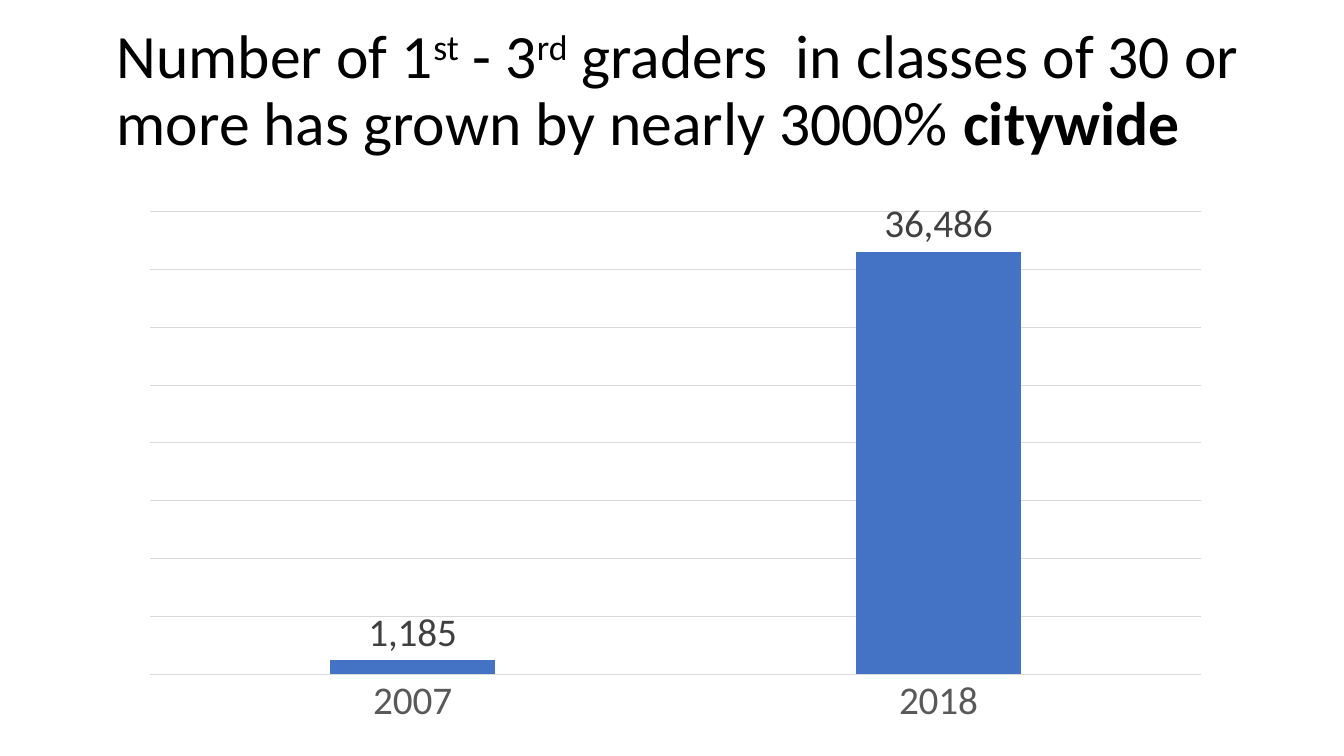
from lxml import etree
from pptx import Presentation
from pptx.chart.data import CategoryChartData
from pptx.dml.color import RGBColor
from pptx.enum.chart import XL_CHART_TYPE, XL_LABEL_POSITION, XL_TICK_MARK
from pptx.enum.text import MSO_ANCHOR
from pptx.oxml.ns import qn
from pptx.util import Inches, Pt

COLUMN = XL_CHART_TYPE.COLUMN_CLUSTERED
OUTSIDE = XL_LABEL_POSITION.OUTSIDE_END
NO_TICK = XL_TICK_MARK.NONE
MIDDLE = MSO_ANCHOR.MIDDLE
FACE = "Calibri"
BLACK, GREY, DARK, PALE, BLUE = "000000", "595959", "404040", "D9D9D9", "4472C4"

# Title runs: text, raised, bold
TITLE = [
    ("Number of 1", False, False),
    ("st", True, False),
    (" - 3", False, False),
    ("rd", True, False),
    (" graders  in classes of 30 or more has grown by nearly 3000% ", False, False),
    ("citywide", False, True),
]
COUNTS = {"2007": 1185, "2018": 36486}


def color(code):
    return RGBColor.from_string(code)


def style(font, size, code):
    font.name = FACE
    font.size = Pt(size)
    font.color.rgb = color(code)


def rule(line):
    line.color.rgb = color(PALE)
    line.width = Pt(0.75)


def add_title(slide, left, top, width, height):
    box = slide.shapes.add_textbox(Inches(left), Inches(top), Inches(width), Inches(height))
    frame = box.text_frame
    frame.word_wrap = True
    frame.vertical_anchor = MIDDLE
    para = frame.paragraphs[0]
    para.line_spacing = 0.9
    for text, raised, bold in TITLE:
        run = para.add_run()
        run.text = text
        style(run.font, 44, BLACK)
        run.font.bold = bold
        if raised:
            run.font._element.set("baseline", "30000")


def set_plot(chart, x, y, w, h):
    """Fix the inner plot area as fractions of the chart."""
    area = chart._chartSpace.chart.plotArea
    for old in area.findall(qn("c:layout")):
        area.remove(old)
    layout = etree.Element(qn("c:layout"))
    manual = etree.SubElement(layout, qn("c:manualLayout"))
    parts = [("layoutTarget", "inner"), ("xMode", "edge"), ("yMode", "edge"),
             ("x", x), ("y", y), ("w", w), ("h", h)]
    for tag, value in parts:
        etree.SubElement(manual, qn("c:" + tag)).set("val", str(value))
    area.insert(0, layout)


def add_columns(slide, left, top, width, height):
    data = CategoryChartData(number_format="#,##0")
    data.categories = list(COUNTS)
    data.add_series("Series 1", list(COUNTS.values()))
    chart = slide.shapes.add_chart(
        COLUMN, Inches(left), Inches(top), Inches(width), Inches(height), data).chart
    chart.has_legend = False
    chart.has_title = False
    style(chart.font, 10, BLACK)
    set_plot(chart, 0.063, 0.081, 0.919, 0.808)

    # Columns and their labels
    plot = chart.plots[0]
    plot.vary_by_categories = False
    plot.gap_width = 219
    plot.overlap = -27
    series = plot.series[0]
    series.format.fill.solid()
    series.format.fill.fore_color.rgb = color(BLUE)
    labels = series.data_labels
    labels.show_value = True
    labels.position = OUTSIDE
    labels.number_format = "#,##0"
    labels.number_format_is_linked = False
    style(labels.font, 28, DARK)

    # Axes and gridlines
    years = chart.category_axis
    years.major_tick_mark = years.minor_tick_mark = NO_TICK
    style(years.tick_labels.font, 28, GREY)
    rule(years.format.line)
    scale = chart.value_axis
    scale.minimum_scale, scale.maximum_scale = 0, 40000
    scale.major_unit = 5000
    scale.has_major_gridlines = True
    rule(scale.major_gridlines.format.line)
    scale.visible = False


def main():
    deck = Presentation()
    deck.slide_width, deck.slide_height = Inches(13.33), Inches(7.5)
    slide = deck.slides.add_slide(deck.slide_layouts[6])
    add_title(slide, 1.06, 0.19, 11.5, 1.45)
    add_columns(slide, 0.77, 1.64, 11.35, 5.68)
    deck.save("out.pptx")


if __name__ == "__main__":
    main()
